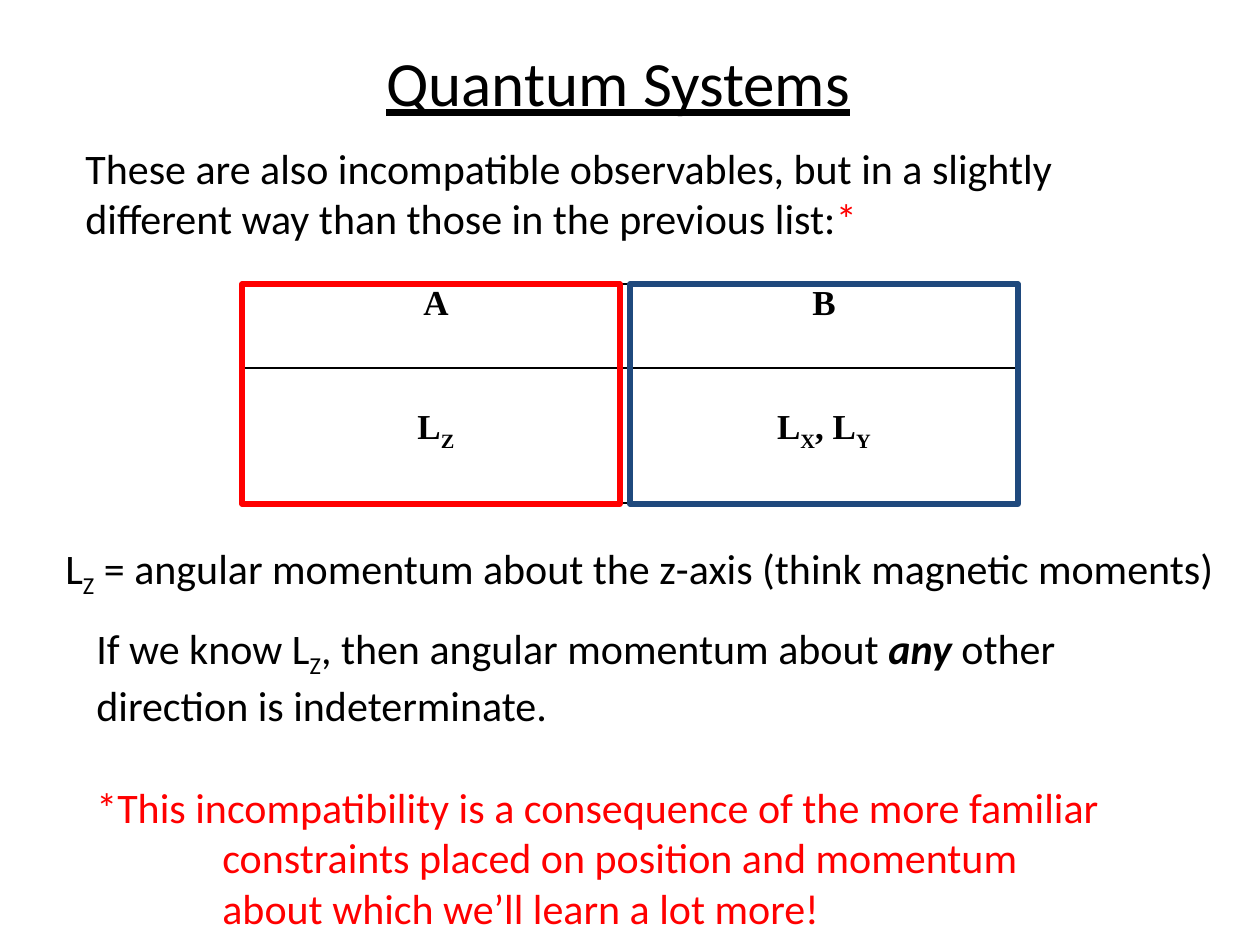
import pptx
import pptx.util
import pptx.dml.color
import pptx.enum.shapes
import pptx.enum.text
import pptx.oxml
import pptx.oxml.ns

RGB = pptx.dml.color.RGBColor
BLACK = RGB(0x00, 0x00, 0x00)
RED = RGB(0xFF, 0x00, 0x00)
BLUE = RGB(0x1F, 0x49, 0x7D)
PX = 914400 / 126

# Formats
BODY = dict(name="Calibri", size=pptx.util.Pt(24), color=BLACK)
TITLE = dict(BODY, size=pptx.util.Pt(36), underline=True)
NOTE = dict(BODY, color=RED)
CELL = dict(BODY, name="Times New Roman", size=pptx.util.Pt(20), bold=True)
SUB = dict(sub=True)
STRONG = dict(bold=True, italic=True)

# Content: a paragraph is a list of (text, changes to the base format)
TEXTS = [  # box in px, wrap, base format, paragraphs
    ((374, 37, 508, 89), False, TITLE, [[("Quantum Systems", {})]]),
    ((73, 136, 1134, 115), True, BODY, [[
        ("These are also incompatible observables, but in a slightly "
         "different way than those in the previous list:", {}),
        ("*", dict(color=RED))]]),
    ((84, 616, 1113, 318), True, BODY, [
        [("If we know L", {}), ("Z", SUB),
         (", then angular momentum about ", {}), ("any", STRONG),
         (" other direction is indeterminate.", {})],
        [("*This incompatibility is a consequence of the more familiar", NOTE)],
        [("constraints placed on position and momentum", NOTE)],
        [("about which we’ll learn a lot more!", NOTE)]]),
    ((53, 536, 1186, 63), False, BODY, [[
        ("L", {}), ("Z", SUB),
        (" = angular momentum about the z-axis (think magnetic moments)", {})]]),
]
NOTE_BOX = 2
NOTE_GAP = pptx.util.Pt(29.3)
NOTE_INDENT = 126

TABLE = (242, 284, 776, 219)
ROWS = [  # height, top margin, cells
    (84, 0, [[("A", {})], [("B", {})]]),
    (135, 40, [[("L", {}), ("Z", SUB)],
               [("L", {}), ("X", SUB), (", L", {}), ("Y", SUB)]]),
]
FRAMES = [((242, 284, 378, 220), RED), ((630, 284, 388, 220), BLUE)]


def px(n):
    return pptx.util.Emu(round(n * PX))


def add_runs(p, runs, base):
    for text, changes in runs:
        r = p.add_run()
        r.text = text
        for key, value in {**base, **changes}.items():
            if key == "color":
                r.font.color.rgb = value
            elif key == "sub":
                r.font._element.set("baseline", "-25000")
            else:
                setattr(r.font, key, value)


def add_text(slide, box, wrap, base, paragraphs):
    tf = slide.shapes.add_textbox(*map(px, box)).text_frame
    tf.word_wrap = wrap
    tf.auto_size = pptx.enum.text.MSO_AUTO_SIZE.SHAPE_TO_FIT_TEXT
    for i, runs in enumerate(paragraphs):
        p = tf.add_paragraph() if i else tf.paragraphs[0]
        add_runs(p, runs, base)
    return tf


def add_borders(cell):
    tc_pr = cell._tc.get_or_add_tcPr()
    for i, side in enumerate("LRTB"):
        tc_pr.insert(i, pptx.oxml.parse_xml(
            f'<a:ln{side} {pptx.oxml.ns.nsdecls("a")} w="12700"><a:solidFill>'
            f'<a:srgbClr val="{BLACK}"/></a:solidFill></a:ln{side}>'))


def add_table(slide):
    table = slide.shapes.add_table(len(ROWS), 2, *map(px, TABLE)).table
    table.first_row = table.horz_banding = False
    for row, (height, top, cells) in zip(table.rows, ROWS):
        row.height = px(height)
        for cell, runs in zip(row.cells, cells):
            margins = dict(margin_left=9, margin_right=9,
                           margin_top=top, margin_bottom=0)
            for key, value in margins.items():
                setattr(cell, key, px(value))
            cell.fill.background()
            add_borders(cell)
            p = cell.text_frame.paragraphs[0]
            p.alignment = pptx.enum.text.PP_ALIGN.CENTER
            add_runs(p, runs, CELL)


def add_frame(slide, box, color):
    sp = slide.shapes.add_shape(
        pptx.enum.shapes.MSO_SHAPE.RECTANGLE, *map(px, box))
    sp.shadow.inherit = False
    sp.fill.background()
    sp.line.color.rgb = color
    sp.line.width = pptx.util.Pt(3)


def main():
    prs = pptx.Presentation()
    prs.slide_width, prs.slide_height = px(1260), px(945)
    slide = prs.slides.add_slide(prs.slide_layouts[6])

    # Table under its coloured frames
    add_table(slide)
    for box, color in FRAMES:
        add_frame(slide, box, color)

    # Title and statements
    frames = [add_text(slide, *item) for item in TEXTS]

    # Footnote: gap above, later lines indented
    _, first, *rest = frames[NOTE_BOX].paragraphs
    first.space_before = NOTE_GAP
    for p in rest:
        p._p.get_or_add_pPr().set("marL", str(px(NOTE_INDENT)))

    prs.save("out.pptx")


if __name__ == "__main__":
    main()
